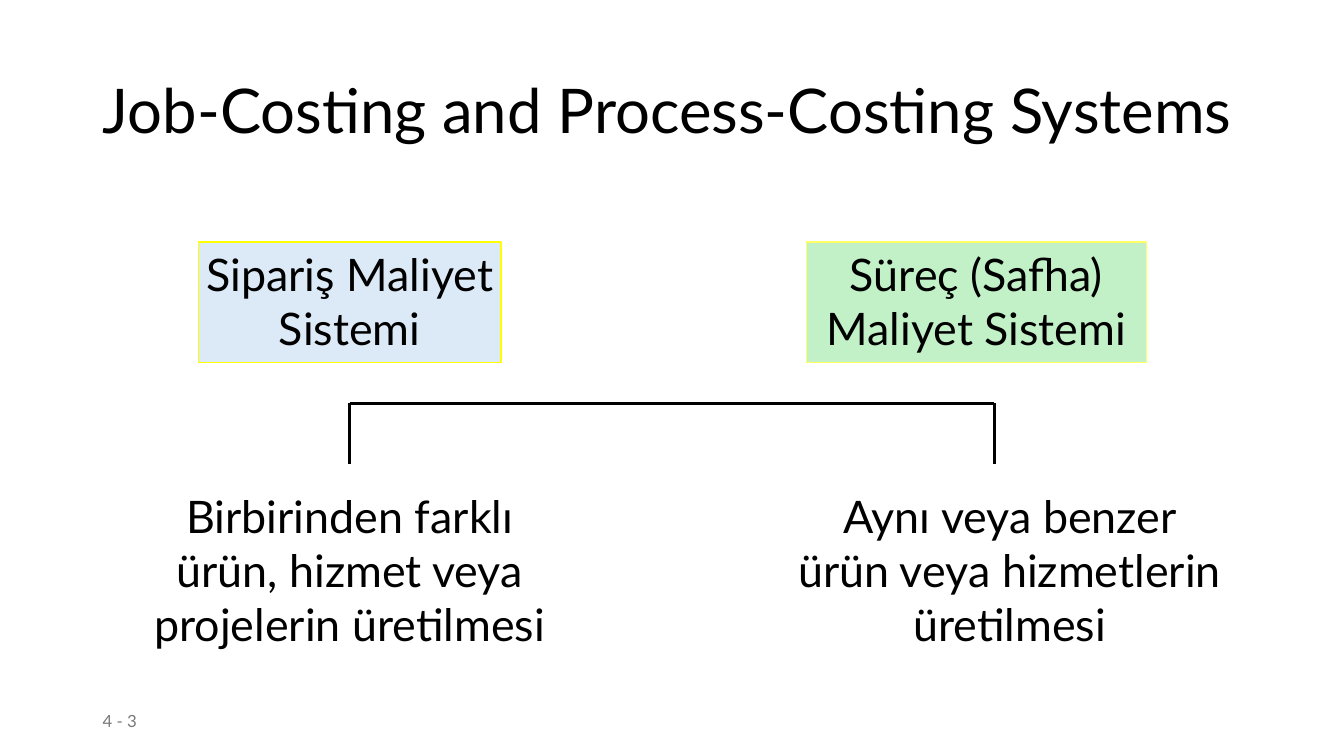
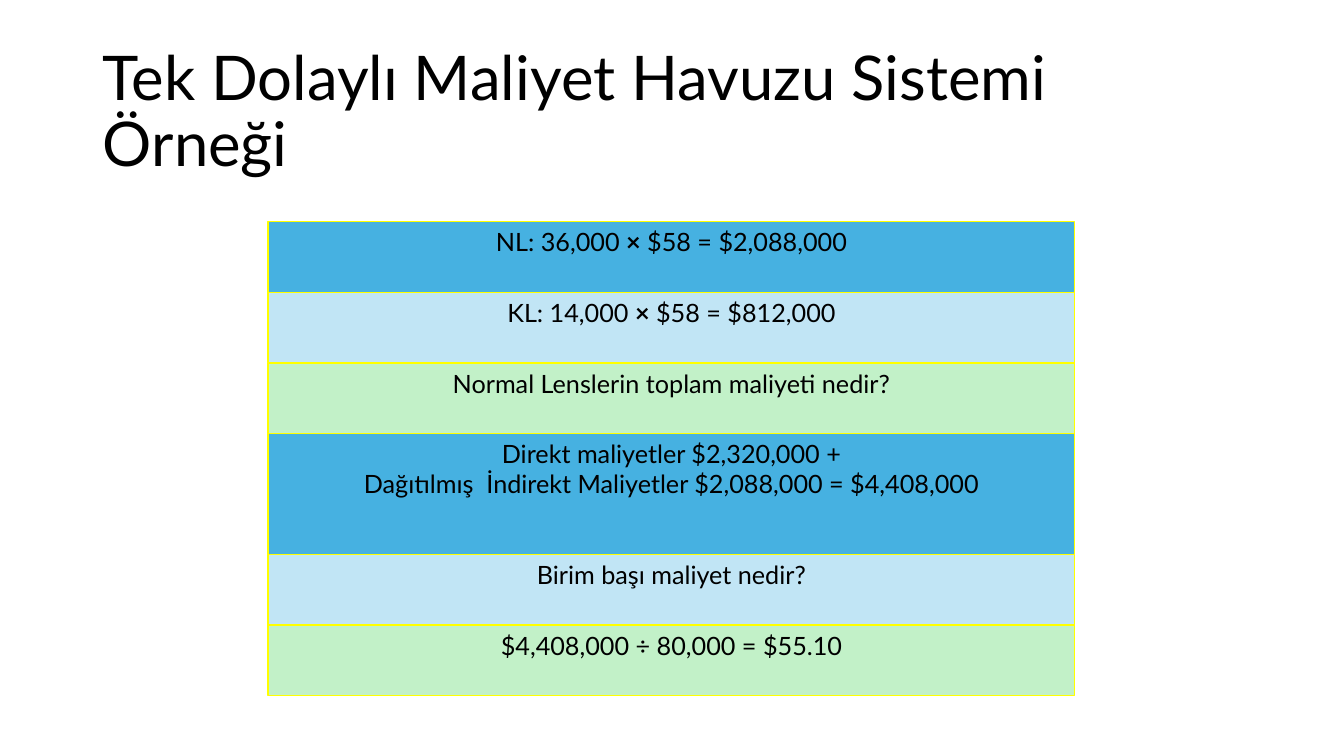
import pptx
import pptx.util
import pptx.dml.color
import pptx.enum.shapes
import pptx.enum.text
import pptx.oxml.ns
import lxml.etree

Inches = pptx.util.Inches
Pt = pptx.util.Pt
ALIGN = pptx.enum.text.PP_ALIGN
ANCHOR = pptx.enum.text.MSO_ANCHOR

BLACK, WHITE, GREY = "000000", "FFFFFF", "797979"
YELLOW, PALE_YELLOW = "FFFF00", "FFFF66"
BLUE, LIGHT_BLUE, PALE_BLUE, GREEN = "46B1E1", "C1E5F5", "DCEAF7", "C2F1C8"


def rgb(value):
    return pptx.dml.color.RGBColor.from_string(value)


class Deck:
    font = "Lato"
    margin = 0.92

    def __init__(self):
        self.presentation = pptx.Presentation()
        self.presentation.slide_width = Inches(13.33)
        self.presentation.slide_height = Inches(7.5)
        self.slide = None

    def add_slide(self, title):
        layout = self.presentation.slide_layouts.get_by_name("Title Only")
        self.slide = self.presentation.slides.add_slide(layout)
        background = self.slide.background.fill
        background.solid()
        background.fore_color.rgb = rgb(WHITE)
        heading = self.slide.shapes.title
        heading.left, heading.top = Inches(self.margin), Inches(0.4)
        heading.width, heading.height = Inches(11.5), Inches(1.45)
        self.set_text(heading, title, 44, align=ALIGN.LEFT, anchor=ANCHOR.MIDDLE)
        heading.text_frame.paragraphs[0].line_spacing = 0.9

    def set_text(self, shape, text, size, color=BLACK, align=ALIGN.CENTER,
                 anchor=ANCHOR.TOP, wrap=True):
        frame = shape.text_frame
        frame.text = text
        frame.auto_size = pptx.enum.text.MSO_AUTO_SIZE.NONE
        frame.word_wrap = wrap
        frame.vertical_anchor = anchor
        for paragraph in frame.paragraphs:
            paragraph.alignment = align
            self.embolden_times_sign(paragraph)
            for run in paragraph.runs:
                run.font.name = self.font
                run.font.size = Pt(size)
                run.font.color.rgb = rgb(color)

    def embolden_times_sign(self, paragraph):
        before, sign, after = paragraph.text.partition("×")
        if sign:
            paragraph.text = before
            for part in (sign, after):
                run = paragraph.add_run()
                run.text = part
                run.font.bold = part == sign

    def label(self, text, left, top, width, height, size, **style):
        box = self.slide.shapes.add_textbox(
            Inches(left), Inches(top), Inches(width), Inches(height))
        self.set_text(box, text, size, **style)

    def box(self, text, left, top, width, height, size, fill,
            border=YELLOW, wrap=True):
        box = self.slide.shapes.add_shape(
            pptx.enum.shapes.MSO_SHAPE.RECTANGLE,
            Inches(left), Inches(top), Inches(width), Inches(height))
        box.shadow.inherit = False
        box.fill.solid()
        box.fill.fore_color.rgb = rgb(fill)
        box.line.color.rgb = rgb(border)
        box.line.width = Pt(1)
        self.set_text(box, text, size, wrap=wrap)

    def line(self, x1, y1, x2, y2):
        line = self.slide.shapes.add_connector(
            pptx.enum.shapes.MSO_CONNECTOR.STRAIGHT,
            Inches(x1), Inches(y1), Inches(x2), Inches(y2))
        line.line.color.rgb = rgb(BLACK)
        line.line.width = Pt(2.25)
        properties = line._element.spPr
        lxml.etree.SubElement(properties, pptx.oxml.ns.qn("a:effectLst"))

    def page_number(self, text):
        self.label(text, self.margin, 6.95, 3, 0.4, 12, color=GREY,
                   align=ALIGN.LEFT, anchor=ANCHOR.MIDDLE)


def costing_systems(deck):
    deck.add_slide("Job-Costing and Process-Costing Systems")
    deck.page_number("4 - 3")

    systems = [
        ("Sipariş Maliyet\nSistemi", 1.97, 3, PALE_BLUE, YELLOW),
        ("Süreç (Safha)\nMaliyet Sistemi", 8, 3.37, GREEN, PALE_YELLOW),
    ]
    for name, left, width, fill, border in systems:
        deck.box(name, left, 2.4, width, 1.2, 32, fill, border, wrap=False)

    bracket_left, bracket_right, bracket_top = 3.47, 9.86, 4
    deck.line(bracket_left, bracket_top, bracket_right, bracket_top)
    for x in (bracket_left, bracket_right):
        deck.line(x, bracket_top, x, bracket_top + 0.6)

    outputs = [
        ("Birbirinden farklı ürün, hizmet veya projelerin üretilmesi", 1.32, 4.3),
        ("Aynı veya benzer ürün veya hizmetlerin üretilmesi", 7.81, 4.41),
    ]
    for description, left, width in outputs:
        deck.label(description, left, 4.8, width, 1.72, 32)


def single_cost_pool(deck):
    deck.add_slide("Tek Dolaylı Maliyet Havuzu Sistemi Örneği")
    steps = [
        "NL: 36,000 × $58 = $2,088,000",
        "KL: 14,000 × $58 = $812,000",
        "Normal Lenslerin toplam maliyeti nedir?",
        "Direkt maliyetler $2,320,000 +\n"
        "Dağıtılmış  İndirekt Maliyetler $2,088,000 = $4,408,000",
        "Birim başı maliyet nedir?",
        "$4,408,000 ÷ 80,000 = $55.10",
    ]
    fills = (BLUE, LIGHT_BLUE, GREEN)
    top = 2.2
    for index, step in enumerate(steps):
        height = 1.2 if "\n" in step else 0.7
        deck.box(step, 2.66, top, 8, height, 18, fills[index % len(fills)])
        top += height


def main():
    deck = Deck()
    costing_systems(deck)
    single_cost_pool(deck)
    deck.presentation.save("out.pptx")


if __name__ == "__main__":
    main()
